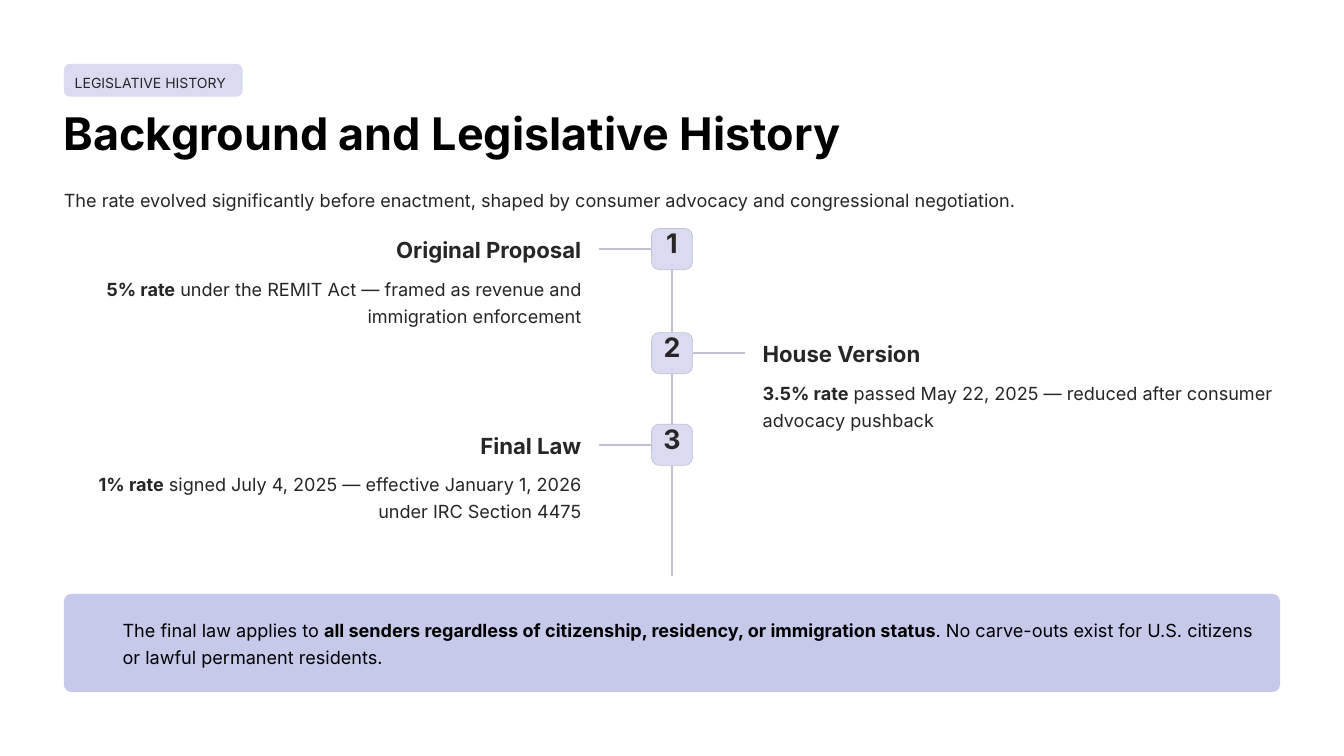
import dataclasses

import lxml.etree
import pptx
import pptx.dml.color
import pptx.enum.shapes
import pptx.enum.text
import pptx.oxml.ns
import pptx.util

TAG = "LEGISLATIVE HISTORY"
TITLE = "Background and Legislative History"
INTRO = (
    "The rate evolved significantly before enactment, "
    "shaped by consumer advocacy and congressional negotiation."
)
STEPS = [
    ("Original Proposal", 2.72, [
        ("5% rate", True),
        (" under the REMIT Act — framed as revenue and immigration enforcement", False),
    ]),
    ("House Version", 3.96, [
        ("3.5% rate", True),
        (" passed May 22, 2025 — reduced after consumer advocacy pushback", False),
    ]),
    ("Final Law", 5.05, [
        ("1% rate", True),
        (" signed July 4, 2025 — effective January 1, 2026 under IRC Section 4475", False),
    ]),
]
CALLOUT = [
    ("The final law applies to ", False),
    ("all senders regardless of citizenship, residency, or immigration status", True),
    (". No carve-outs exist for U.S. citizens or lawful permanent residents.", False),
]


@dataclasses.dataclass(frozen=True)
class Style:
    size: float
    leading: float
    color: str = "272525"
    bold: bool = False


@dataclasses.dataclass(frozen=True)
class Theme:
    font: str = "Inter"
    badge: str = "DADBF1"
    line: str = "C0C1D7"
    callout: str = "C7C9EA"
    tag: Style = Style(12, 18.5)
    title: Style = Style(38.5, 48.5, "000000", True)
    body: Style = Style(15.5, 23)
    number: Style = Style(23, 23, bold=True)
    heading: Style = Style(19, 24, bold=True)
    note: Style = Style(15.5, 23, "000000")


THEME = Theme()
WIDTH, HEIGHT = 16, 9
MARGIN = 0.76
CONTENT = WIDTH - 2 * MARGIN
CENTER = WIDTH / 2
BADGE = 0.49
COLUMN = 6.16
HEADING = 2.7
GUTTER = 1.08
BRANCH_END = 0.87
LEFT = pptx.enum.text.PP_ALIGN.LEFT
MIDDLE = pptx.enum.text.PP_ALIGN.CENTER
RIGHT = pptx.enum.text.PP_ALIGN.RIGHT


def inches(*values):
    return [pptx.util.Inches(v) for v in values]


def rgb(value):
    return pptx.dml.color.RGBColor.from_string(value)


def add_box(slide, x, y, w, h, fill, corner, line=None):
    kind = pptx.enum.shapes.MSO_SHAPE.ROUNDED_RECTANGLE
    sp = slide.shapes.add_shape(kind, *inches(x, y, w, h))
    sp.adjustments[0] = corner
    sp.shadow.inherit = False
    sp.fill.solid()
    sp.fill.fore_color.rgb = rgb(fill)
    if line:
        sp.line.color.rgb = rgb(line)
        sp.line.width = pptx.util.Pt(0.6)
    else:
        sp.line.fill.background()
    return sp


def add_text(slide, x, y, w, h, runs, style, align=LEFT):
    tf = slide.shapes.add_textbox(*inches(x, y, w, h)).text_frame
    tf.margin_left = tf.margin_right = tf.margin_top = tf.margin_bottom = 0
    tf.word_wrap = True
    p = tf.paragraphs[0]
    p.alignment = align
    p.line_spacing = pptx.util.Pt(style.leading)
    p.font.name = THEME.font
    p.font.size = pptx.util.Pt(style.size)
    p.font.color.rgb = rgb(style.color)
    p.font.bold = style.bold
    for text, bold in runs:
        r = p.add_run()
        r.text = text
        if bold != style.bold:
            r.font.bold = bold


def add_line(slide, x1, y1, x2, y2):
    kind = pptx.enum.shapes.MSO_CONNECTOR.STRAIGHT
    line = slide.shapes.add_connector(kind, *inches(x1, y1, x2, y2))
    line.line.color.rgb = rgb(THEME.line)
    line.line.width = pptx.util.Pt(2)
    effects = pptx.oxml.ns.qn("a:effectLst")
    lxml.etree.SubElement(line._element.spPr, effects)
    return line


def add_step(slide, number, heading, y, detail):
    on_left = number % 2 == 1
    side = -1 if on_left else 1
    align = RIGHT if on_left else LEFT
    middle = y + BADGE / 2
    column_x = CENTER - GUTTER - COLUMN if on_left else CENTER + GUTTER
    heading_x = CENTER - GUTTER - HEADING if on_left else CENTER + GUTTER

    badge = add_box(slide, CENTER - BADGE / 2, y, BADGE, BADGE,
                    THEME.badge, 0.19, THEME.line)
    branch = add_line(slide, CENTER + side * BADGE / 2, middle,
                      CENTER + side * BRANCH_END, middle)
    branch.begin_connect(badge, 1 if on_left else 3)
    add_text(slide, CENTER - 0.16, y + 0.04, 0.32, 0.41,
             [(str(number), True)], THEME.number, MIDDLE)
    add_text(slide, heading_x, y + 0.08, HEADING, 0.34,
             [(heading, True)], THEME.heading, align)
    add_text(slide, column_x, y + 0.53, COLUMN, 0.65, detail, THEME.body, align)


def main():
    prs = pptx.Presentation()
    prs.slide_width, prs.slide_height = inches(WIDTH, HEIGHT)
    slide = prs.slides.add_slide(prs.slide_layouts[6])

    add_box(slide, MARGIN, 0.76, 2.13, 0.39, THEME.badge, 0.19)
    add_text(slide, MARGIN + 0.13, 0.83, 1.87, 0.26, [(TAG, False)], THEME.tag)
    add_text(slide, MARGIN, 1.23, 9.35, 0.68, [(TITLE, True)], THEME.title)
    add_text(slide, MARGIN, 2.19, CONTENT, 0.32, [(INTRO, False)], THEME.body)

    add_line(slide, CENTER, STEPS[0][1], CENTER, 6.86)
    for number, (heading, y, detail) in enumerate(STEPS, 1):
        add_step(slide, number, heading, y, detail)

    add_box(slide, MARGIN, 7.07, CONTENT, 1.17, THEME.callout, 0.08)
    add_text(slide, MARGIN + 0.7, 7.31, 13.57, 0.65, CALLOUT, THEME.note)

    prs.save("out.pptx")


if __name__ == "__main__":
    main()
